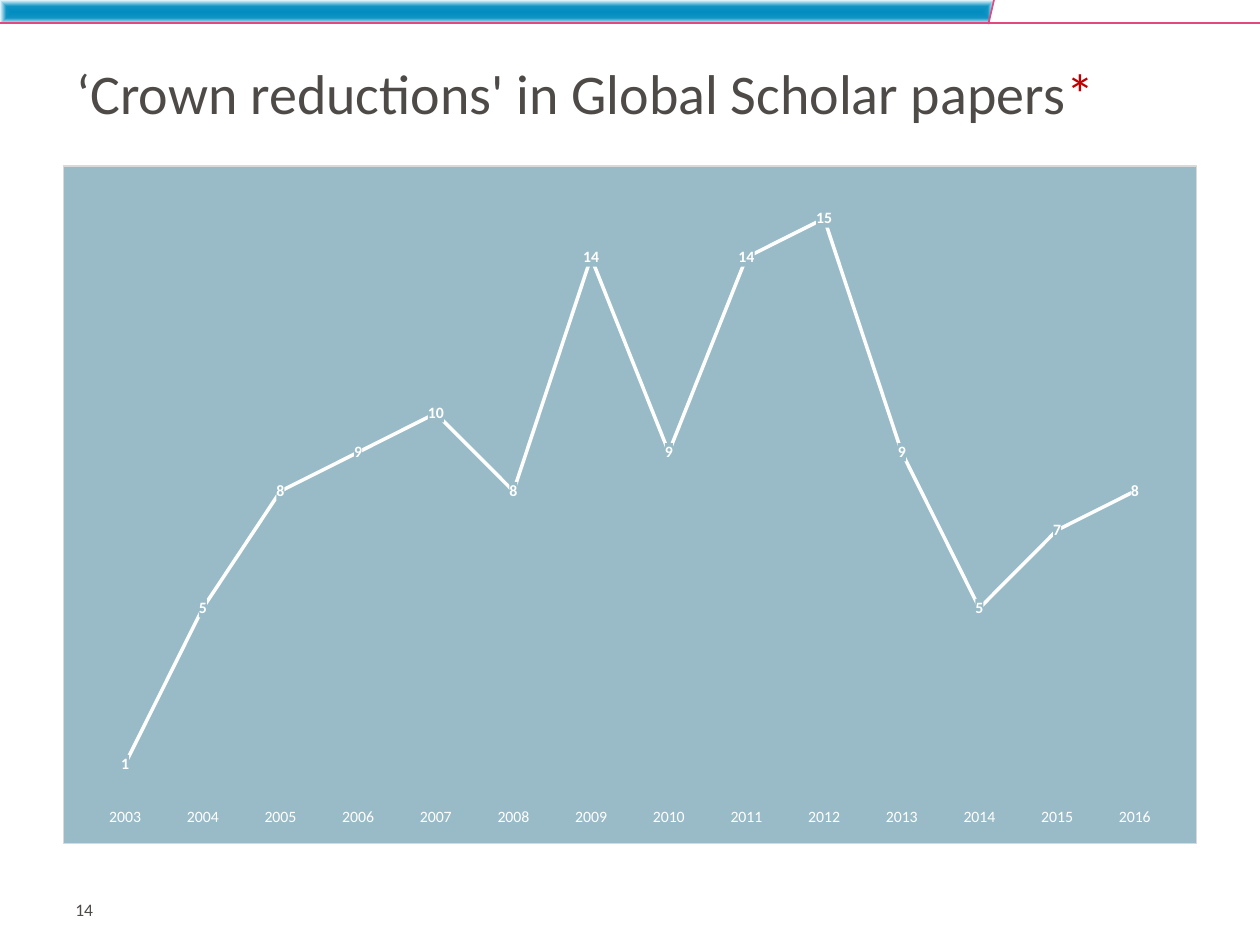
from dataclasses import dataclass
from lxml import etree
from pptx import Presentation
from pptx import oxml
from pptx.chart import data
from pptx.dml.color import RGBColor
from pptx.enum import chart as ch, shapes, text
from pptx.oxml import ns
from pptx.util import Pt


@dataclass(frozen=True)
class Theme:
    font: str = "Calibri"
    ink: str = "4E4A48"
    star: str = "C00000"
    pink: str = "E2497F"
    panel: str = "99BBC7"
    edge: str = "D9D9D9"
    white: str = "FFFFFF"
    glow: tuple = ((0, "038CC0"), (49, "0F94C4"), (100, "EEF9FD"))
    head: int = 32
    note: int = 10
    tick: int = 9


T = Theme()
YEARS = [str(year) for year in range(2003, 2017)]
PAPERS = [1, 5, 8, 9, 10, 8, 14, 9, 14, 15, 9, 5, 7, 8]


def rgb(code):
    return RGBColor.from_string(code)


def style(font, size, color, bold=False):
    font.name, font.size, font.bold = T.font, Pt(size), bold
    font.color.rgb = rgb(color)


def place(shape, box):
    shape.left, shape.top, shape.width, shape.height = map(Pt, box)


def glow(shape):
    """Fill a shape with a gradient that runs from its centre to its edges."""
    stops = "".join(
        f'<a:gs pos="{pos * 1000}"><a:srgbClr val="{code}"/></a:gs>'
        for pos, code in T.glow)
    fill = oxml.parse_xml(
        f'<a:gradFill {ns.nsdecls("a")} rotWithShape="1"><a:gsLst>{stops}</a:gsLst>'
        '<a:path path="shape"><a:fillToRect l="50000" t="50000" r="50000" b="50000"/>'
        '</a:path></a:gradFill>')
    props = shape.fill._xPr
    props.find(ns.qn("a:custGeom")).addnext(fill)


def rule(slide, start, end):
    line = slide.shapes.add_connector(
        shapes.MSO_CONNECTOR.STRAIGHT, *map(Pt, start + end))
    line.line.color.rgb, line.line.width = rgb(T.pink), Pt(1)
    etree.SubElement(line._element.spPr, ns.qn("a:effectLst"))


def band(slide, box, full):
    """Draw the slanted top bar and its rules, the lower one as wide as full."""
    left, top, width, height = box
    right, base, slant = left + width, top + height, 3.2
    path = slide.shapes.build_freeform(Pt(left), Pt(top))
    path.add_line_segments([
        (Pt(right), Pt(top)), (Pt(right - slant), Pt(base)), (Pt(left), Pt(base))])
    bar = path.convert_to_shape()
    bar.shadow.inherit = False
    bar.line.fill.background()
    glow(bar)
    rule(slide, (right, top), (right - slant, base))
    rule(slide, (left + full, base - 0.7), (left, base - 0.7))


def title(slide, box):
    shape = slide.shapes.title
    place(shape, box)
    frame = shape.text_frame
    frame.vertical_anchor = text.MSO_ANCHOR.MIDDLE
    frame.auto_size = text.MSO_AUTO_SIZE.NONE
    para = frame.paragraphs[0]
    para.alignment = text.PP_ALIGN.LEFT
    for words, color in (("‘Crown reductions' in Global Scholar papers", T.ink),
                         ("*", T.star)):
        run = para.add_run()
        run.text = words
        style(run.font, T.head, color)


def number(slide, box):
    frame = slide.shapes.add_textbox(*map(Pt, box)).text_frame
    frame.word_wrap = True
    frame.margin_top = 0
    para = frame.paragraphs[0]
    para.text = "14"
    style(para.font, T.note, T.ink)


def solid(code):
    return f'<a:solidFill><a:srgbClr val="{code}"/></a:solidFill>'


def panel(chart):
    """Give the chart its background, border and inner plot position."""
    root = chart._chartSpace
    root.find(ns.qn("c:chart")).addnext(oxml.parse_xml(
        f'<c:spPr {ns.nsdecls("c", "a")}>{solid(T.panel)}'
        f'<a:ln w="{Pt(0.75)}">{solid(T.edge)}</a:ln></c:spPr>'))
    area = root.find(".//" + ns.qn("c:plotArea"))
    for old in area.findall(ns.qn("c:layout")):
        area.remove(old)
    spots = "".join(
        f'<c:{key} val="{val}"/>' for key, val in (
            ("layoutTarget", "inner"), ("xMode", "edge"), ("yMode", "edge"),
            ("x", 0.02), ("y", 0.02), ("w", 0.96), ("h", 0.92)))
    area.insert(0, oxml.parse_xml(
        f'<c:layout {ns.nsdecls("c")}><c:manualLayout>{spots}'
        '</c:manualLayout></c:layout>'))


def trend(slide, box):
    source = data.CategoryChartData()
    source.categories = YEARS
    source.add_series("Series 1", PAPERS)
    chart = slide.shapes.add_chart(
        ch.XL_CHART_TYPE.LINE, *map(Pt, box), source).chart
    chart.has_legend = chart.has_title = False
    chart.font.name, chart.font.size = T.font, Pt(T.note)
    panel(chart)

    years, count = chart.category_axis, chart.value_axis
    years.major_tick_mark = ch.XL_TICK_MARK.NONE
    years.format.line.fill.background()
    style(years.tick_labels.font, T.tick, T.white)
    count.visible = count.has_major_gridlines = False
    count.minimum_scale, count.maximum_scale = 0, 16

    plot = chart.plots[0]
    plot.vary_by_categories = False
    line = plot.series[0]
    line.smooth = False
    line.marker.style = ch.XL_MARKER_STYLE.NONE
    line.format.line.color.rgb = rgb(T.white)
    line.format.line.width = Pt(2)
    labels = line.data_labels
    labels.show_value = True
    labels.position = ch.XL_LABEL_POSITION.CENTER
    style(labels.font, T.tick, T.white, bold=True)
    labels._element.find(ns.qn("c:txPr")).addprevious(oxml.parse_xml(
        f'<c:spPr {ns.nsdecls("c", "a")}>{solid(T.panel)}</c:spPr>'))


def main():
    deck = Presentation()
    deck.slide_width, deck.slide_height = Pt(720), Pt(540)
    slide = deck.slides.add_slide(deck.slide_layouts[5])
    band(slide, (0, 0, 568, 13.8), 720)
    title(slide, (36.5, 27.5, 648, 50))
    number(slide, (36, 513.5, 154, 21.5))
    trend(slide, (36, 94.5, 648, 388))
    deck.save("out.pptx")


if __name__ == "__main__":
    main()
